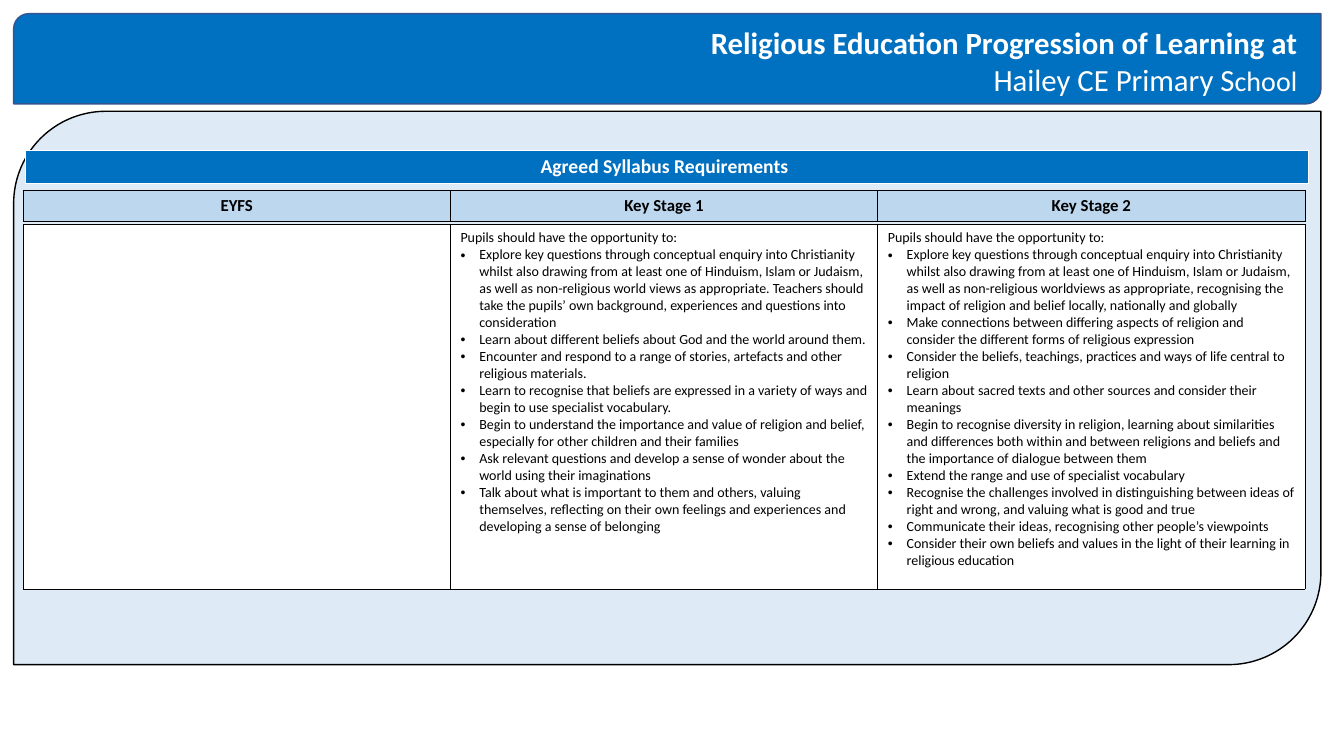
from dataclasses import dataclass

from lxml.etree import SubElement
from pptx import Presentation
from pptx.dml.color import RGBColor
from pptx.enum.shapes import MSO_SHAPE
from pptx.enum.text import PP_ALIGN
from pptx.oxml.ns import qn
from pptx.util import Emu, Pt

WHITE = RGBColor(0xFF, 0xFF, 0xFF)
BLACK = RGBColor(0x00, 0x00, 0x00)
BLUE = RGBColor(0x00, 0x70, 0xC0)
NAVY = RGBColor(0x32, 0x54, 0x91)
PALE_BLUE = RGBColor(0xDE, 0xEB, 0xF7)
LIGHT_BLUE = RGBColor(0xBD, 0xD7, 0xEE)

EMU_PER_PX = 9525
BULLET_INDENT = 18
BORDER_SIDES = ("a:lnL", "a:lnR", "a:lnT", "a:lnB")

TITLE = {"name": "Calibri", "size": Pt(22), "bold": True}
SCHOOL = TITLE | {"bold": False}
SCHOOL_END = SCHOOL | {"size": Pt(20)}
SECTION = TITLE | {"size": Pt(14)}
STAGE = TITLE | {"size": Pt(12)}
BODY = SCHOOL | {"size": Pt(10)}


@dataclass(frozen=True)
class Panel:
    left: int
    top: int
    width: int
    height: int
    fill: RGBColor
    line: RGBColor


@dataclass(frozen=True)
class Grid:
    left: int
    top: int
    column_width: int
    height: int
    cells: tuple[tuple[str, ...], ...]
    fill: RGBColor
    color: RGBColor
    style: dict
    align: PP_ALIGN
    bordered: bool = True


PANELS = (
    Panel(13, 13, 1245, 86, BLUE, NAVY),
    Panel(13, 106, 1245, 527, PALE_BLUE, BLACK),
)

HEADING = (
    (("Religious Education Progression of Learning at", TITLE),),
    (("Hailey CE Primary S", SCHOOL), ("chool", SCHOOL_END)),
)

KEY_STAGE_1 = (
    "Pupils should have the opportunity to:",
    "Explore key questions through conceptual enquiry into Christianity whilst also drawing from at least one of Hinduism, Islam or Judaism, as well as non-religious world views as appropriate. Teachers should take the pupils’ own background, experiences and questions into consideration",
    "Learn about different beliefs about God and the world around them.",
    "Encounter and respond to a range of stories, artefacts and other religious materials.",
    "Learn to recognise that beliefs are expressed in a variety of ways and begin to use specialist vocabulary.",
    "Begin to understand the importance and value of religion and belief, especially for other children and their families",
    "Ask relevant questions and develop a sense of wonder about the world using their imaginations",
    "Talk about what is important to them and others, valuing themselves, reflecting on their own feelings and experiences and developing a sense of belonging",
)

KEY_STAGE_2 = (
    "Pupils should have the opportunity to:",
    "Explore key questions through conceptual enquiry into Christianity whilst also drawing from at least one of Hinduism, Islam or Judaism, as well as non-religious worldviews as appropriate, recognising the impact of religion and belief locally, nationally and globally",
    "Make connections between differing aspects of religion and consider the different forms of religious expression",
    "Consider the beliefs, teachings, practices and ways of life central to religion",
    "Learn about sacred texts and other sources and consider their meanings",
    "Begin to recognise diversity in religion, learning about similarities and differences both within and between religions and beliefs and the importance of dialogue between them",
    "Extend the range and use of specialist vocabulary",
    "Recognise the challenges involved in distinguishing between ideas of right and wrong, and valuing what is good and true",
    "Communicate their ideas, recognising other people’s viewpoints",
    "Consider their own beliefs and values in the light of their learning in religious education",
)

GRIDS = (
    Grid(24, 143, 1222, 32, (("Agreed Syllabus Requirements ",),),
         BLUE, WHITE, SECTION, PP_ALIGN.CENTER, bordered=False),
    Grid(22, 181, 407, 30, (("EYFS",), ("Key Stage 1",), ("Key Stage 2",)),
         LIGHT_BLUE, BLACK, STAGE, PP_ALIGN.CENTER),
    Grid(22, 214, 407, 347, ((), KEY_STAGE_1, KEY_STAGE_2),
         WHITE, BLACK, BODY, PP_ALIGN.LEFT),
)


def px(length: int) -> Emu:
    return Emu(length * EMU_PER_PX)


def add_span(para, text: str, style: dict, color: RGBColor) -> None:
    span = para.add_run()
    span.text = text
    for name, value in style.items():
        setattr(span.font, name, value)
    span.font.color.rgb = color


def add_bullet(para) -> None:
    properties = para._p.get_or_add_pPr()
    properties.set("marL", str(px(BULLET_INDENT)))
    properties.set("indent", str(px(-BULLET_INDENT)))
    SubElement(properties, qn("a:buFont"), typeface="Arial")
    SubElement(properties, qn("a:buChar"), char="•")


def add_borders(cell) -> None:
    properties = cell._tc.get_or_add_tcPr()
    for side in BORDER_SIDES:
        line = SubElement(properties, qn(side), w=str(Pt(0.5)))
        fill = SubElement(line, qn("a:solidFill"))
        SubElement(fill, qn("a:srgbClr"), val=str(BLACK))


def draw_panel(page, panel: Panel) -> None:
    shape = page.shapes.add_shape(
        MSO_SHAPE.ROUND_2_DIAG_RECTANGLE,
        px(panel.left), px(panel.top), px(panel.width), px(panel.height))
    shape.shadow.inherit = False
    shape.fill.solid()
    shape.fill.fore_color.rgb = panel.fill
    shape.line.color.rgb = panel.line
    shape.line.width = Pt(1)


def draw_heading(page) -> None:
    box = page.shapes.add_textbox(px(616), px(18), px(629), px(81))
    frame = box.text_frame
    frame.word_wrap = True
    for index, spans in enumerate(HEADING):
        para = frame.add_paragraph() if index else frame.paragraphs[0]
        para.alignment = PP_ALIGN.RIGHT
        for text, style in spans:
            add_span(para, text, style, WHITE)


def fill_cell(cell, lines: tuple[str, ...], grid: Grid) -> None:
    if grid.bordered:
        add_borders(cell)
    cell.fill.solid()
    cell.fill.fore_color.rgb = grid.fill
    for index, text in enumerate(lines):
        frame = cell.text_frame
        para = frame.add_paragraph() if index else frame.paragraphs[0]
        para.alignment = grid.align
        if index:
            add_bullet(para)
        add_span(para, text, grid.style, grid.color)


def draw_grid(page, grid: Grid) -> None:
    count = len(grid.cells)
    table = page.shapes.add_table(
        1, count, px(grid.left), px(grid.top),
        px(grid.column_width * count), px(grid.height)).table
    table.first_row = False
    table.horz_banding = False
    for column, cell, lines in zip(table.columns, table.rows[0].cells, grid.cells):
        column.width = px(grid.column_width)
        fill_cell(cell, lines, grid)


def main() -> None:
    deck = Presentation()
    deck.slide_width, deck.slide_height = px(1280), px(720)
    page = deck.slides.add_slide(deck.slide_layouts[6])
    banner, backdrop = PANELS
    draw_panel(page, banner)
    draw_heading(page)
    draw_panel(page, backdrop)
    for grid in GRIDS:
        draw_grid(page, grid)
    deck.save("out.pptx")


if __name__ == "__main__":
    main()
